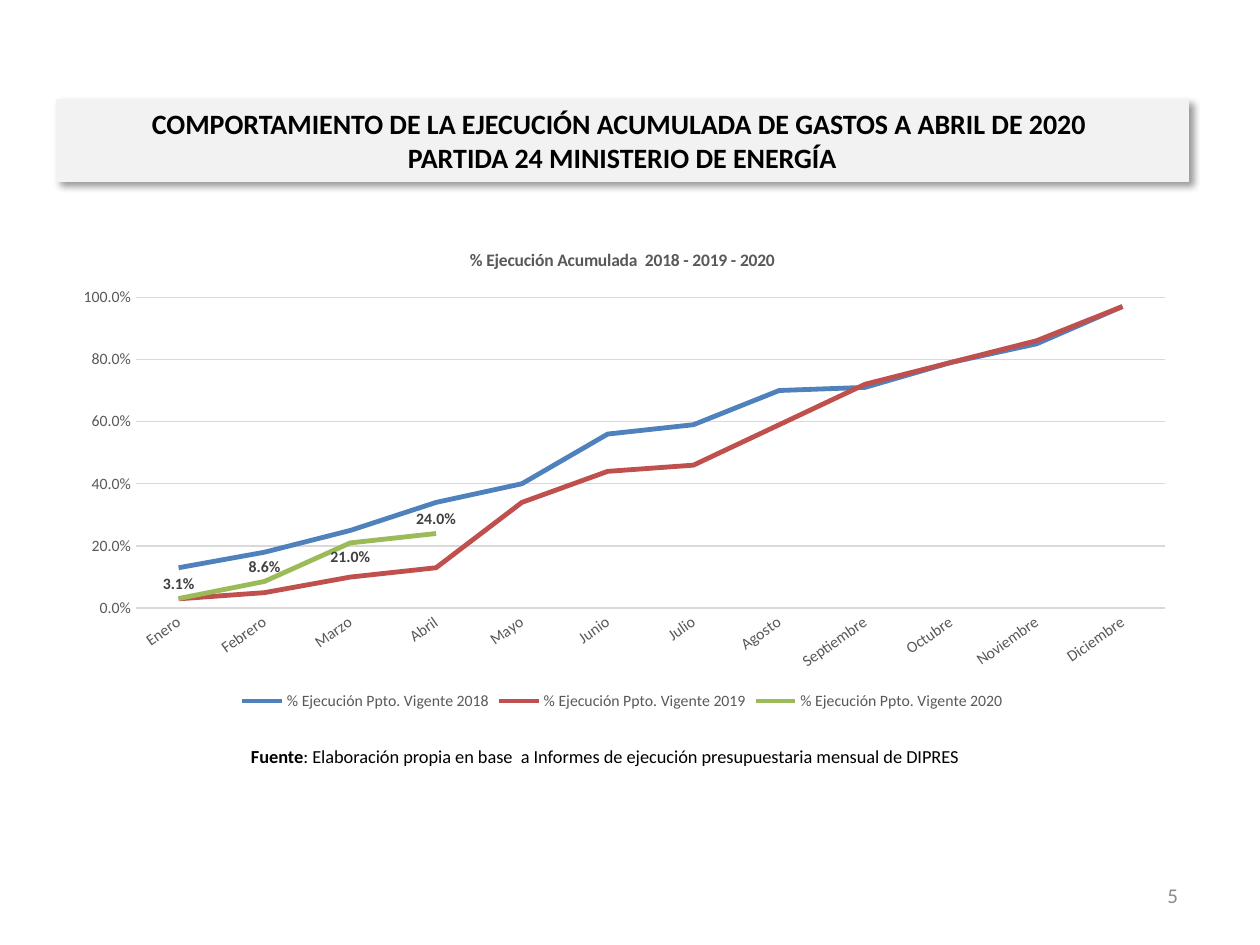
from lxml import etree
from pptx import Presentation
from pptx.chart.data import CategoryChartData
from pptx.dml.color import RGBColor
from pptx.enum.chart import XL_CHART_TYPE, XL_LABEL_POSITION, XL_LEGEND_POSITION, XL_TICK_MARK
from pptx.enum.text import MSO_ANCHOR, PP_ALIGN
from pptx.oxml import parse_xml
from pptx.oxml.ns import nsdecls
from pptx.util import Cm, Pt

GREY = "595959"
GRID = "D9D9D9"
MONTHS = ["Enero", "Febrero", "Marzo", "Abril", "Mayo", "Junio", "Julio", "Agosto",
          "Septiembre", "Octubre", "Noviembre", "Diciembre"]
# Year: (line colour, accumulated share per month)
EXECUTION = {
    2018: ("4F81BD", [0.13, 0.18, 0.25, 0.34, 0.4, 0.56, 0.59, 0.7, 0.71, 0.79, 0.85, 0.97]),
    2019: ("C0504D", [0.03, 0.05, 0.1, 0.13, 0.34, 0.44, 0.46, 0.59, 0.72, 0.79, 0.86, 0.97]),
    2020: ("9BBB59", [0.031, 0.086, 0.21, 0.24]),
}


def rgb(value):
    return RGBColor.from_string(value)


def style(font, size, color, bold=False):
    font.name, font.size, font.bold = "Calibri", Pt(size), bold
    font.color.rgb = rgb(color)


def add_title(s, x, y, w, h):
    sp = s.shapes.title
    sp.left, sp.top, sp.width, sp.height = x, y, w, h
    sp.fill.solid()
    sp.fill.fore_color.rgb = rgb("F2F2F2")
    sp.line.color.rgb = rgb("F2F2F2")
    sp.line.width = Pt(0.75)
    # Soft shadow towards the lower right
    sp._element.spPr.append(parse_xml(
        f'<a:effectLst {nsdecls("a")}><a:outerShdw blurRad="50800" dist="38100" dir="2700000" '
        'algn="tl" rotWithShape="0"><a:srgbClr val="000000"><a:alpha val="40000"/></a:srgbClr>'
        '</a:outerShdw></a:effectLst>'))
    tf = sp.text_frame
    tf.text = ("COMPORTAMIENTO DE LA EJECUCIÓN ACUMULADA DE GASTOS A ABRIL DE 2020 \v"
               "PARTIDA 24 MINISTERIO DE ENERGÍA")
    tf.vertical_anchor = MSO_ANCHOR.MIDDLE
    p = tf.paragraphs[0]
    p.alignment = PP_ALIGN.CENTER
    for r in p.runs:
        style(r.font, 16, "000000", True)


def add_text(s, x, y, w, h, parts, size, color, align):
    """Place one line made of (text, bold) parts."""
    tf = s.shapes.add_textbox(x, y, w, h).text_frame
    tf.word_wrap = True
    tf.vertical_anchor = MSO_ANCHOR.MIDDLE
    p = tf.paragraphs[0]
    p.alignment = align
    for text, bold in parts:
        r = p.add_run()
        r.text = text
        style(r.font, size, color, bold)


def format_axes(chart):
    cat, val = chart.category_axis, chart.value_axis
    for axis in (cat, val):
        axis.major_tick_mark = axis.minor_tick_mark = XL_TICK_MARK.NONE
        style(axis.tick_labels.font, 9, GREY)
    cat.format.line.color.rgb = rgb(GRID)
    cat.format.line.width = Pt(1)
    # Slanted month names
    cat._element.txPr.bodyPr.set("rot", "-2100000")
    val.minimum_scale, val.maximum_scale, val.major_unit = 0, 1, 0.2
    val.tick_labels.number_format = "0.0%"
    val.tick_labels.number_format_is_linked = False
    val.format.line.fill.background()
    val.major_gridlines.format.line.color.rgb = rgb(GRID)
    val.major_gridlines.format.line.width = Pt(0.75)


def set_plot_area(chart, **box):
    """Fix the inner plot area, in fractions of the chart."""
    area = chart._chartSpace.chart.plotArea
    for old in area.findall("{*}layout"):
        area.remove(old)
    sizes = "".join(f'<c:{k} val="{v}"/>' for k, v in box.items())
    area.insert(0, etree.fromstring(
        f'<c:layout {nsdecls("c")}><c:manualLayout><c:layoutTarget val="inner"/>'
        f'<c:xMode val="edge"/><c:yMode val="edge"/>{sizes}</c:manualLayout></c:layout>'))


def label_points(series, count):
    labels = series.data_labels
    labels.show_value = True
    labels.number_format, labels.number_format_is_linked = "0.0%", False
    labels.position = XL_LABEL_POSITION.ABOVE
    style(labels.font, 9, "404040", True)
    # March sits below its line, clear of the 2018 line
    march = series.points[MONTHS.index("Marzo")].data_label
    march.position = XL_LABEL_POSITION.BELOW
    style(march.font, 9, "404040", True)


def add_execution_chart(s, x, y, w, h):
    data = CategoryChartData(number_format="0.0%")
    data.categories = MONTHS
    for year, (_, values) in EXECUTION.items():
        data.add_series(f"% Ejecución Ppto. Vigente {year}",
                        values + [None] * (len(MONTHS) - len(values)))
    chart = s.shapes.add_chart(XL_CHART_TYPE.LINE, x, y, w, h, data).chart
    style(chart.font, 10, "000000")

    chart.has_title = True
    tf = chart.chart_title.text_frame
    tf.text = "% Ejecución Acumulada  2018 - 2019 - 2020"
    style(tf.paragraphs[0].runs[0].font, 10, GREY, True)
    chart.chart_title.include_in_layout = False

    chart.has_legend = True
    chart.legend.position = XL_LEGEND_POSITION.BOTTOM
    chart.legend.include_in_layout = False
    style(chart.legend.font, 9, GREY)

    format_axes(chart)
    set_plot_area(chart, x=0.07, y=0.14, w=0.91, h=0.64)
    plot = chart.plots[0]
    plot.vary_by_categories = False
    for series, (color, _) in zip(plot.series, EXECUTION.values()):
        series.smooth = False
        series.format.line.color.rgb = rgb(color)
        series.format.line.width = Pt(2.75)
    label_points(plot.series[-1], len(EXECUTION[2020][1]))


def main():
    prs = Presentation()
    prs.slide_width, prs.slide_height = Cm(25.4), Cm(19.05)
    s = prs.slides.add_slide(prs.slide_layouts[5])
    left, width = Cm(1.14), Cm(22.81)
    add_title(s, left, Cm(2), width, Cm(1.66))
    add_execution_chart(s, left, Cm(4.62), width, Cm(9.8))
    # Source line
    add_text(s, Cm(2.46), Cm(14.73), Cm(19.48), Cm(1.02),
             [("Fuente", True),
              (": Elaboración propia en base  a Informes de ejecución presupuestaria "
               "mensual de DIPRES", False)], 10.5, "000000", PP_ALIGN.CENTER)
    # Page number
    add_text(s, Cm(18.08), Cm(17.53), Cm(5.92), Cm(1.02), [("5", False)],
             12, "8C8C8C", PP_ALIGN.RIGHT)
    prs.save("out.pptx")


if __name__ == "__main__":
    main()
